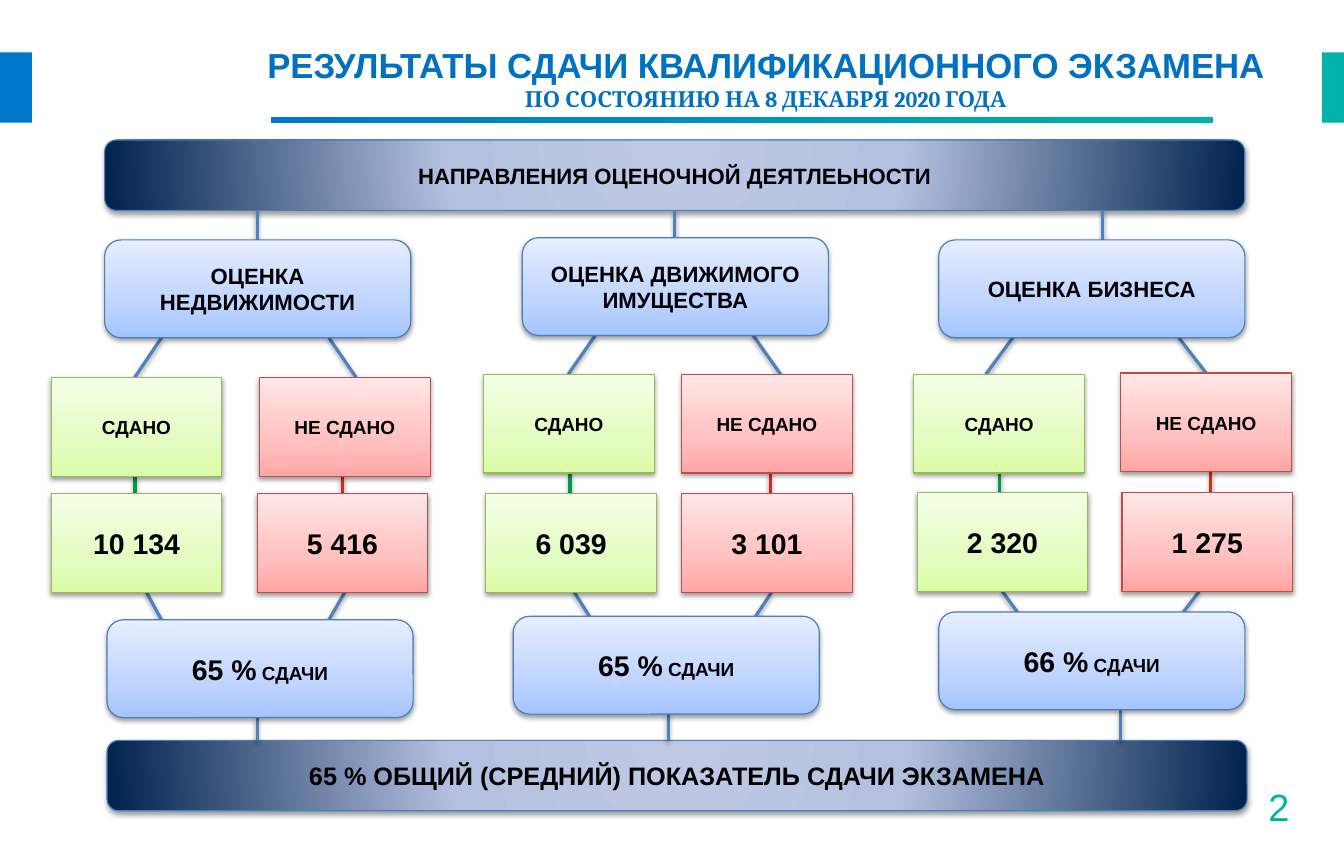
"""Build the slide with the qualification exam results."""
from dataclasses import dataclass

import pptx
import pptx.dml.color
import pptx.enum.shapes
import pptx.enum.text
import pptx.oxml
import pptx.oxml.ns
import pptx.util

Pt = pptx.util.Pt
Kind = pptx.enum.shapes.MSO_SHAPE
Align = pptx.enum.text.PP_ALIGN
Anchor = pptx.enum.text.MSO_ANCHOR
NS = pptx.oxml.ns.nsdecls("a")


@dataclass(frozen=True)
class Theme:
    blue: str = "0077C8"
    teal: str = "00B2A9"
    title: str = "0070C0"
    ink: str = "000000"
    link: str = "4F81BD"
    edge: str = "4B7EBC"
    green: str = "009B48"
    red: str = "D52B1E"
    moss: str = "98B955"
    rose: str = "BF4C48"
    navy: tuple = ((0, "BFC9E5"), (40, "B5C0E0"), (100, "00234D"))
    sky: tuple = ((0, "A4C4FF"), (35, "BFD4FF"), (100, "E6EEFF"))
    lime: tuple = ((0, "DAFDA7"), (35, "E4FCC2"), (100, "F5FFE7"))
    pink: tuple = ((0, "FFA6A5"), (35, "FFC0BF"), (100, "FFE7E7"))
    rule: tuple = ((0, "0077C8"), (100, "00B2A9"))
    sans: str = "Arial"
    serif: str = "Cambria"
    small: int = 12
    text: int = 14
    total: int = 16
    value: int = 18
    main: int = 22
    page: int = 24


T = Theme()
UP = '<a:lin ang="16200000" scaled="0"/>'
ACROSS = '<a:lin ang="0" scaled="0"/>'
GLOW = ('<a:path path="circle"><a:fillToRect l="50000" t="-80000" '
        'r="50000" b="180000"/></a:path>')
HEAD = (193.7, 61.9)
CELL = (108, 62.6)
BAR = (721.4, 44.6)
TOP = (66.2, 88.6)
END = (67.7, 468.7)

COLS = (
    dict(name="ОЦЕНКА НЕДВИЖИМОСТИ", rate="65 %", head=(66.2, 151.9),
         foot=(67.7, 392.4), tie=(162.7, 162.7),
         sides=(("10 134", (32.4, 239), (32.4, 312.5), (102.2, 85.4, 102.2)),
                ("5 416", (164.2, 239), (162.7, 312.5), (208.1, 216.7, 208.1)))),
    dict(name="ОЦЕНКА ДВИЖИМОГО ИМУЩЕСТВА", rate="65 %", head=(330.5, 150.5),
         foot=(324.7, 390.2), tie=(427, 422.9),
         sides=(("6 039", (306, 236.9), (307.4, 312.5), (376.6, 360.7, 373)),
                ("3 101", (431.3, 236.9), (431.3, 312.5), (476.6, 487.4, 478.1)))),
    dict(name="ОЦЕНКА БИЗНЕСА", rate="66 %", head=(594, 151.9),
         foot=(594, 387.4), tie=(697.7, 709.2),
         sides=(("2 320", (578.2, 236.9), (580.3, 311.8), (640.8, 632.5, 643.7)),
                ("1 275", (709.2, 236.2), (709.9, 311.8), (745.9, 766.1, 748.8)))),
)
SIDES = (("СДАНО", T.lime, T.moss, T.green, -17, -9.5),
         ("НЕ СДАНО", T.pink, T.rose, T.red, 17.3, 10))


def tint(code):
    """Return a colour from its hex code."""
    return pptx.dml.color.RGBColor.from_string(code)


def shade(part):
    """Give a shape or line a soft shadow below it."""
    props = part.element.spPr
    for old in props.findall(pptx.oxml.ns.qn("a:effectLst")):
        props.remove(old)
    props.append(pptx.oxml.parse_xml(
        f'<a:effectLst {NS}><a:outerShdw blurRad="40000" dist="20000" '
        'dir="5400000" rotWithShape="0"><a:srgbClr val="000000">'
        '<a:alpha val="38000"/></a:srgbClr></a:outerShdw></a:effectLst>'))


def blend(shape, stops, course):
    """Fill a shape with a gradient."""
    shape.fill.gradient()
    props = shape.element.spPr
    marks = "".join(f'<a:gs pos="{at * 1000}"><a:srgbClr val="{code}"/></a:gs>'
                    for at, code in stops)
    props.replace(props.find(pptx.oxml.ns.qn("a:gradFill")), pptx.oxml.parse_xml(
        f'<a:gradFill {NS} rotWithShape="1"><a:gsLst>{marks}</a:gsLst>'
        f'{course}</a:gradFill>'))


def write(para, runs, align=Align.CENTER, color=T.ink, bold=True, face=T.sans):
    """Write runs of text and size into a paragraph."""
    para.alignment = align
    for words, size in runs:
        run = para.add_run()
        run.text = words
        look = dict(size=Pt(size), name=face, bold=bold)
        for key, value in look.items():
            setattr(run.font, key, value)
        run.font.color.rgb = tint(color)


def block(slide, spot, size, fill, course=None):
    """Draw a plain rectangle with no outline."""
    shape = slide.shapes.add_shape(Kind.RECTANGLE, *map(Pt, spot + size))
    shape.shadow.inherit = False
    shape.line.fill.background()
    if course:
        blend(shape, fill, course)
    else:
        shape.fill.solid()
        shape.fill.fore_color.rgb = tint(fill)


def card(slide, kind, spot, size, fill, edge, runs, course=UP):
    """Draw a shaded box with centred text."""
    shape = slide.shapes.add_shape(kind, *map(Pt, spot + size))
    blend(shape, fill, course)
    shape.line.color.rgb = tint(edge)
    shape.line.width = Pt(0.75)
    shade(shape)
    frame = shape.text_frame
    frame.word_wrap = True
    frame.vertical_anchor = Anchor.MIDDLE
    write(frame.paragraphs[0], runs)


def link(slide, start, end, color=T.link):
    """Draw a shaded straight line."""
    line = slide.shapes.add_connector(
        pptx.enum.shapes.MSO_CONNECTOR.STRAIGHT, *map(Pt, start + end))
    line.line.color.rgb = tint(color)
    line.line.width = Pt(2)
    shade(line)


def frame(slide):
    """Draw the side marks, title, rule and page number."""
    block(slide, (0, 33.1), (20.2, 44.6), T.blue)
    block(slide, (836.4, 33.1), (14, 44.6), T.teal)
    block(slide, (171.4, 74.2), (596.2, 3.4), T.rule, ACROSS)
    title = slide.shapes.add_textbox(*map(Pt, (168.5, 27.6, 632.2, 51.1))).text_frame
    for side in ("left", "top", "right", "bottom"):
        setattr(title, f"margin_{side}", 0)
    title.word_wrap = False
    write(title.paragraphs[0], [("РЕЗУЛЬТАТЫ СДАЧИ КВАЛИФИКАЦИОННОГО ЭКЗАМЕНА", T.main)],
          color=T.title)
    write(title.add_paragraph(), [("ПО СОСТОЯНИЮ НА 8 ДЕКАБРЯ 2020 ГОДА", T.text)],
          color=T.title, face=T.serif)
    page = slide.shapes.add_textbox(*map(Pt, (752.4, 492.5, 70.6, 28.8))).text_frame
    page.word_wrap = True
    write(page.paragraphs[0], [("2", T.page)], Align.RIGHT, T.teal, False)


def column(slide, col):
    """Draw one field of valuation from its heading to its pass rate."""
    head, foot = col["head"], col["foot"]
    upper, lower = col["tie"]
    base = head[1] + HEAD[1]
    link(slide, (upper, TOP[1] + BAR[1]), (upper, head[1]))
    link(slide, (lower, foot[1] + HEAD[1]), (lower, END[1]))
    for (count, tag, box, knots), side in zip(col["sides"], SIDES):
        label, fill, edge, color, spread, lean = side
        fork, stem, join = knots
        link(slide, (fork, base), (fork + spread, tag[1]))
        link(slide, (stem, tag[1] + CELL[1]), (stem, box[1]), color)
        link(slide, (join + lean, box[1] + CELL[1]), (join, foot[1]))
        card(slide, Kind.RECTANGLE, tag, CELL, fill, edge, [(label, T.small)])
        card(slide, Kind.RECTANGLE, box, CELL, fill, edge, [(count, T.value)])
    rate = [(col["rate"], T.value), (" СДАЧИ", T.small)]
    for spot, runs in ((head, [(col["name"], T.text)]), (foot, rate)):
        card(slide, Kind.ROUNDED_RECTANGLE, spot, HEAD, T.sky, T.edge, runs)


def main():
    """Build and save the slide."""
    deck = pptx.Presentation()
    deck.slide_width, deck.slide_height = Pt(850.4), Pt(540)
    slide = deck.slides.add_slide(deck.slide_layouts[6])
    frame(slide)
    for spot, words, size in (
            (TOP, "НАПРАВЛЕНИЯ ОЦЕНОЧНОЙ ДЕЯТЛЕЬНОСТИ", T.text),
            (END, "65 % ОБЩИЙ (СРЕДНИЙ) ПОКАЗАТЕЛЬ СДАЧИ ЭКЗАМЕНА", T.total)):
        card(slide, Kind.ROUNDED_RECTANGLE, spot, BAR, T.navy, T.edge,
             [(words, size)], GLOW)
    for col in COLS:
        column(slide, col)
    deck.save("out.pptx")


if __name__ == "__main__":
    main()
